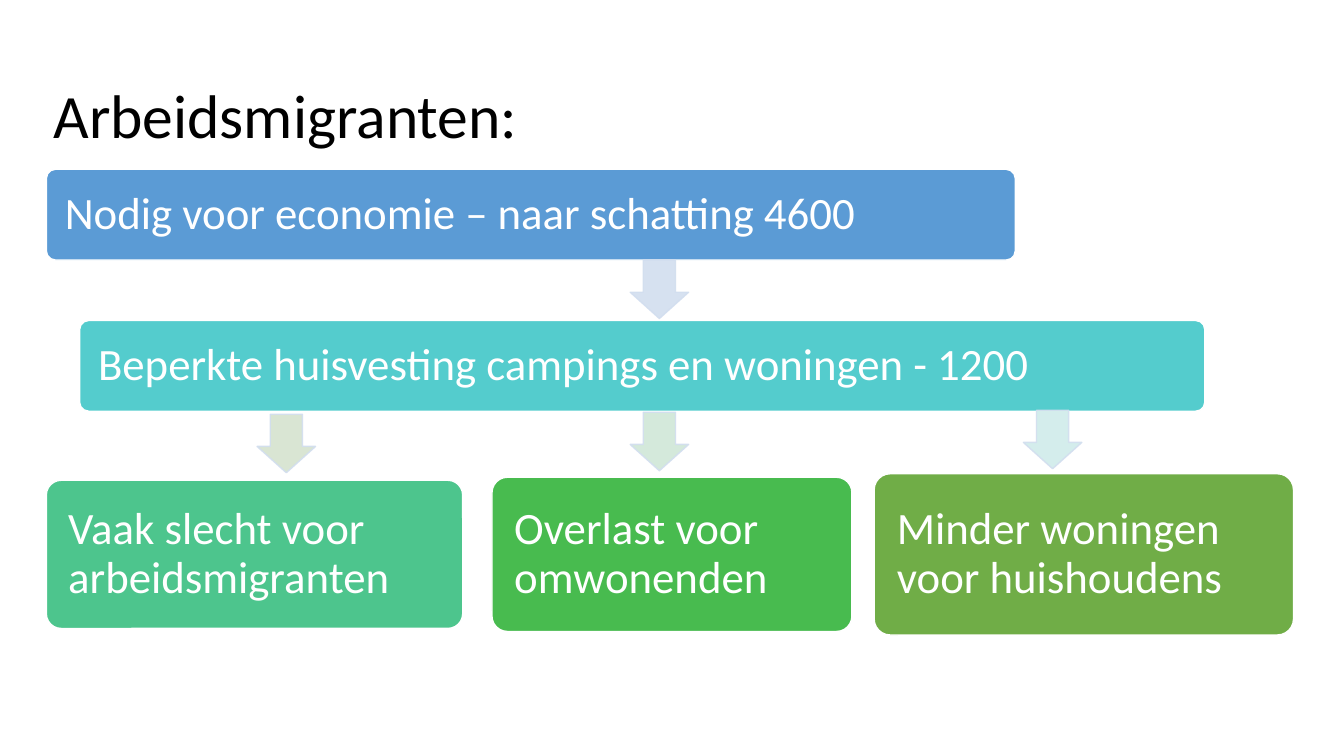
from lxml import etree
from pptx import Presentation
from pptx.dml.color import RGBColor
from pptx.enum.shapes import MSO_SHAPE
from pptx.enum.text import MSO_ANCHOR, PP_ALIGN
from pptx.oxml.ns import qn
from pptx.util import Inches, Pt

ROUNDED = MSO_SHAPE.ROUNDED_RECTANGLE
DOWN_ARROW = MSO_SHAPE.DOWN_ARROW
MIDDLE = MSO_ANCHOR.MIDDLE
LEFT = PP_ALIGN.LEFT

BLACK = RGBColor(0x00, 0x00, 0x00)
WHITE = RGBColor(0xFF, 0xFF, 0xFF)
BLUE = RGBColor(0x5B, 0x9B, 0xD5)
TURQUOISE = RGBColor(0x54, 0xCC, 0xCD)
MINT = RGBColor(0x4D, 0xC5, 0x8D)
GREEN = RGBColor(0x48, 0xBB, 0x4F)
OLIVE = RGBColor(0x70, 0xAD, 0x47)
PALE_BLUE = RGBColor(0xD2, 0xDE, 0xEF)
PALE_TURQUOISE = RGBColor(0xD0, 0xEC, 0xEA)
PALE_MINT = RGBColor(0xD0, 0xE7, 0xD8)
PALE_OLIVE = RGBColor(0xD5, 0xE3, 0xCF)

FONT = "Calibri"
ARROW_SIZE = 0.58
ROW_CENTERS = (2.13, 3.63, 5.5)


def format_text(frame, text, size, color):
    frame.text = text
    frame.word_wrap = True
    frame.vertical_anchor = MIDDLE
    paragraph = frame.paragraphs[0]
    paragraph.alignment = LEFT
    paragraph.line_spacing = 0.9
    paragraph.font.name = FONT
    paragraph.font.size = Pt(size)
    paragraph.font.color.rgb = color


def add_block(kind, left, top, width, height, fill, line):
    shape = slide.shapes.add_shape(
        kind, Inches(left), Inches(top), Inches(width), Inches(height))
    shape.shadow.inherit = False
    shape.fill.solid()
    shape.fill.fore_color.rgb = fill
    shape.line.color.rgb = line
    shape.line.width = Pt(1)
    return shape


presentation = Presentation()
presentation.slide_width = Inches(13.33)
presentation.slide_height = Inches(7.5)
slide = presentation.slides.add_slide(presentation.slide_layouts[5])

title = slide.shapes.title
title.left, title.top = Inches(0.43), Inches(0.35)
title.width, title.height = Inches(12.48), Inches(1.65)
format_text(title.text_frame, "Arbeidsmigranten:", 44, BLACK)

boxes = [
    (0, 0.46, 9.61, 0.9, BLUE, "Nodig voor economie – naar schatting 4600"),
    (1, 0.79, 11.16, 0.9, TURQUOISE, "Beperkte huisvesting campings en woningen - 1200"),
    (2, 0.46, 4.13, 1.47, MINT, "Vaak slecht voor arbeidsmigranten"),
    (2, 4.88, 3.57, 1.53, GREEN, "Overlast voor omwonenden"),
    (2, 8.67, 4.16, 1.6, OLIVE, "Minder woningen voor huishoudens"),
]
for row, left, width, height, color, text in boxes:
    box = add_block(ROUNDED, left, ROW_CENTERS[row] - height / 2,
                    width, height, color, WHITE)
    box.adjustments[0] = 0.1
    frame = box.text_frame
    format_text(frame, text, 32, WHITE)
    frame.margin_left = Inches(0.13 + 0.03 * height)
    frame.margin_right = Inches(0.6)

arrows = [
    (6.25, 2.58, PALE_BLUE),
    (10.15, 4.07, PALE_TURQUOISE),
    (6.25, 4.09, PALE_MINT),
    (2.55, 4.11, PALE_OLIVE),
]
for left, top, color in arrows:
    arrow = add_block(DOWN_ARROW, left, top, ARROW_SIZE, ARROW_SIZE, color, PALE_BLUE)
    arrow.adjustments[0] = 0.55
    arrow.adjustments[1] = 0.45
    for color_element in arrow.element.spPr.iter(qn("a:srgbClr")):
        etree.SubElement(color_element, qn("a:alpha"), val="90000")

presentation.save("out.pptx")
